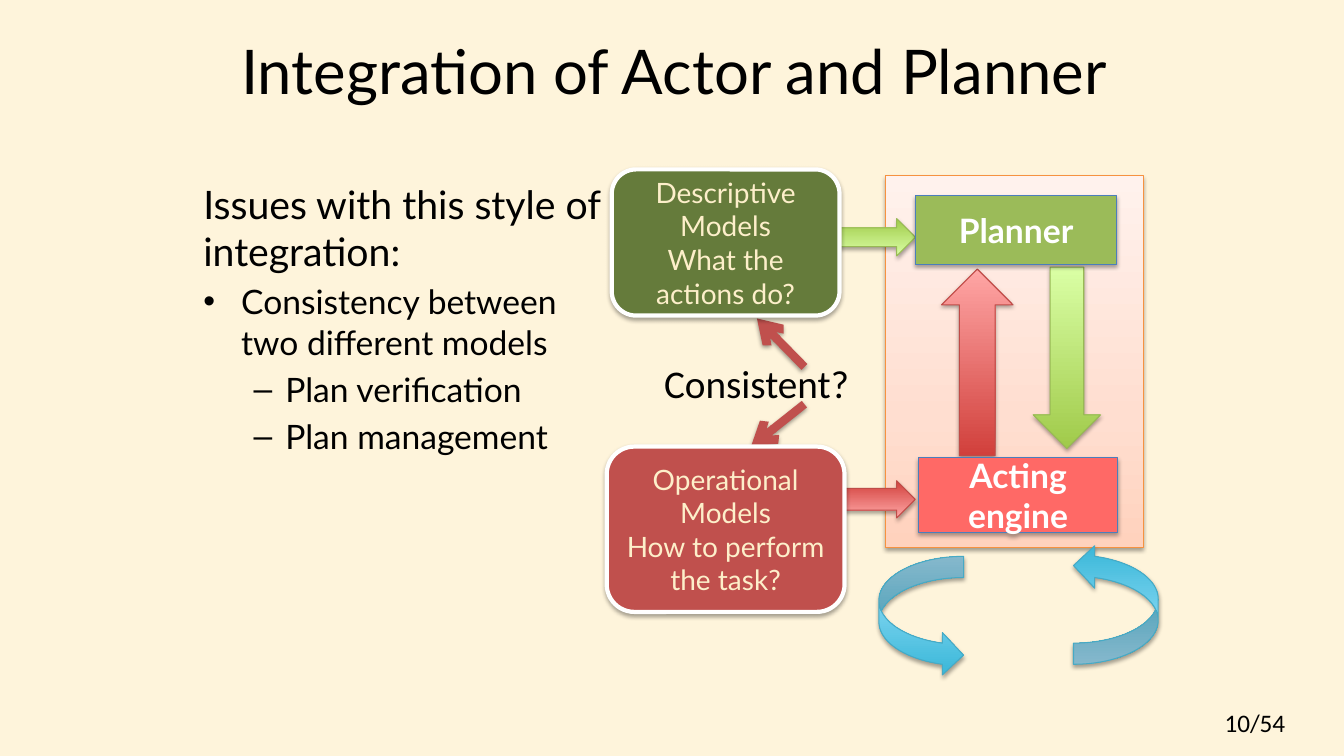
from pptx import Presentation
from pptx.dml.color import RGBColor
from pptx.enum.shapes import MSO_CONNECTOR, MSO_SHAPE
from pptx.enum.text import MSO_ANCHOR, PP_ALIGN
from pptx.oxml import parse_xml
from pptx.oxml.ns import nsdecls, qn
from pptx.util import Pt

RECT, ROUND = MSO_SHAPE.RECTANGLE, MSO_SHAPE.ROUNDED_RECTANGLE
UP, DOWN, RIGHT = MSO_SHAPE.UP_ARROW, MSO_SHAPE.DOWN_ARROW, MSO_SHAPE.RIGHT_ARROW
CURVED = MSO_SHAPE.CURVED_RIGHT_ARROW
STRAIGHT = MSO_CONNECTOR.STRAIGHT
TOP, MIDDLE = MSO_ANCHOR.TOP, MSO_ANCHOR.MIDDLE
LEFT, CENTER = PP_ALIGN.LEFT, PP_ALIGN.CENTER

BACKGROUND = RGBColor(0xFE, 0xF4, 0xDB)
BLACK = RGBColor(0, 0, 0)
WHITE = RGBColor(0xFF, 0xFF, 0xFF)
CREAM = RGBColor(0xFD, 0xEF, 0xCA)
RED = RGBColor(0xC0, 0x50, 0x4D)
OLIVE = RGBColor(0x65, 0x7B, 0x3B)
GREEN = RGBColor(0x9B, 0xBB, 0x59)
CORAL = RGBColor(0xFF, 0x69, 0x66)
BLUE_EDGE = RGBColor(0x4B, 0x7E, 0xBC)
RED_EDGE = RGBColor(0xBF, 0x4C, 0x48)
GREEN_EDGE = RGBColor(0x98, 0xB9, 0x55)
CYAN_EDGE = RGBColor(0x46, 0xAA, 0xC5)
ORANGE_EDGE = RGBColor(0xF6, 0x92, 0x40)

# Gradients as (percent, colour) stops
RED_FADE = [(0, RGBColor(0xD1, 0x40, 0x3C)), (100, RGBColor(0xFF, 0xA6, 0xA5))]
GREEN_FADE = [(0, RGBColor(0xA0, 0xCA, 0x4A)), (100, RGBColor(0xDA, 0xFF, 0xA5))]
CYAN_FADE = [(0, RGBColor(0x39, 0xB7, 0xD8)), (100, RGBColor(0xA7, 0xE6, 0xFF))]
PEACH_FADE = [(0, RGBColor(0xFF, 0xD2, 0xBD)), (35, RGBColor(0xFF, 0xDE, 0xD0)),
              (100, RGBColor(0xFF, 0xF2, 0xED))]


def add_shadow(s, alpha=35, dist=1.8):
    spPr = s._element.spPr
    for old in spPr.findall(qn("a:effectLst")):
        spPr.remove(old)
    spPr.append(parse_xml(
        f'<a:effectLst {nsdecls("a")}><a:outerShdw blurRad="{Pt(3.1)}" '
        f'dist="{Pt(dist)}" dir="5400000" rotWithShape="0"><a:srgbClr val="000000">'
        f'<a:alpha val="{alpha * 1000}"/></a:srgbClr></a:outerShdw></a:effectLst>'))


def set_gradient(s, stops, angle):
    gs = "".join(f'<a:gs pos="{pos * 1000}"><a:srgbClr val="{color}"/></a:gs>'
                 for pos, color in stops)
    s._element.spPr.find(qn("a:prstGeom")).addnext(parse_xml(
        f'<a:gradFill {nsdecls("a")} rotWithShape="1"><a:gsLst>{gs}</a:gsLst>'
        f'<a:lin ang="{angle * 60000}" scaled="0"/></a:gradFill>'))


def add_run(p, text, size, color=BLACK, font="Lato", bold=False):
    r = p.add_run()
    r.text = text
    r.font.size, r.font.name, r.font.bold = Pt(size), font, bold
    r.font.color.rgb = color


def add_text(slide, box, text, size, font="Lato", align=LEFT, anchor=TOP):
    tf = slide.shapes.add_textbox(*map(Pt, box)).text_frame
    tf.word_wrap = True
    tf.vertical_anchor = anchor
    p = tf.paragraphs[0]
    p.alignment = align
    add_run(p, text, size, font=font)
    return tf


def add_bullet(tf, lines, char, margin, hang, level=0):
    p = tf.add_paragraph()
    p.level = level
    pPr = p._p.get_or_add_pPr()
    pPr.set("marL", str(Pt(margin)))
    pPr.set("indent", str(-Pt(hang)))
    p.space_before = Pt(4.8)
    pPr.append(parse_xml(f'<a:buFont {nsdecls("a")} typeface="Arial"/>'))
    pPr.append(parse_xml(f'<a:buChar {nsdecls("a")} char="{char}"/>'))
    for i, line in enumerate(lines):
        if i:
            p.add_line_break()
        add_run(p, line, 24)


def add_block(slide, kind, box, edge, width=0.75):
    s = slide.shapes.add_shape(kind, *map(Pt, box))
    s.line.color.rgb = edge
    s.line.width = Pt(width)
    return s


def add_fade(slide, kind, box, stops, edge, angle=270, rotation=0):
    s = add_block(slide, kind, box, edge)
    s.rotation = rotation
    set_gradient(s, stops, angle)
    add_shadow(s)
    return s


def add_label_box(slide, kind, box, fill, edge, width, lines, size, color, bold=False):
    s = add_block(slide, kind, box, edge, width)
    s.fill.solid()
    s.fill.fore_color.rgb = fill
    add_shadow(s)
    tf = s.text_frame
    tf.word_wrap = True
    tf.vertical_anchor = MIDDLE
    for i, line in enumerate(lines):
        p = tf.add_paragraph() if i else tf.paragraphs[0]
        p.alignment = CENTER
        add_run(p, line, size, color, bold=bold)


def add_check_arrow(slide, x1, y1, x2, y2):
    c = slide.shapes.add_connector(STRAIGHT, Pt(x1), Pt(y1), Pt(x2), Pt(y2))
    c.line.color.rgb = RED
    c.line.width = Pt(6)
    c.line._get_or_add_ln().append(
        parse_xml(f'<a:tailEnd {nsdecls("a")} type="arrow"/>'))
    add_shadow(c, 38, 1.6)


def main():
    prs = Presentation()
    prs.slide_width, prs.slide_height = Pt(960), Pt(540)
    slide = prs.slides.add_slide(prs.slide_layouts[6])
    slide.background.fill.solid()
    slide.background.fill.fore_color.rgb = BACKGROUND

    # Page number, title and issues
    add_text(slide, (867.6, 501.8, 88.6, 28.8), "10/54", 18, "Calibri")
    add_text(slide, (157.7, 5, 648, 90), "Integration of Actor and Planner", 44,
             align=CENTER, anchor=MIDDLE)
    tf = add_text(slide, (138.2, 125.3, 309.6, 378.7),
                  "Issues with this style of integration:", 28)
    add_bullet(tf, ["Consistency between", "two different models"], "•", 27, 27)
    for item in ("Plan verification", "Plan management"):
        add_bullet(tf, [item], "–", 58.5, 22.5, level=1)

    # Consistency check between the models
    add_text(slide, (467.3, 253.4, 172.8, 41), "Consistent?", 28, "Calibri")
    add_check_arrow(slide, 574.6, 262.1, 540.7, 227.5)
    add_check_arrow(slide, 574.6, 288.7, 536.4, 319)

    # Actor panel with its loop arrows
    add_fade(slide, RECT, (632.2, 125.3, 184.3, 265.7), PEACH_FADE, ORANGE_EDGE)
    add_fade(slide, CURVED, (627.8, 397.4, 60.5, 85.7), CYAN_FADE, CYAN_EDGE)
    add_fade(slide, CURVED, (766.8, 388.8, 60.5, 85.7), CYAN_FADE, CYAN_EDGE,
             rotation=180)
    add_fade(slide, UP, (672.5, 192.2, 51.1, 133.2), RED_FADE, RED_EDGE)
    add_fade(slide, DOWN, (738, 190.8, 48.2, 129.6), GREEN_FADE, GREEN_EDGE)

    # Models feeding the planner and the engine
    s = add_fade(slide, RIGHT, (574.6, 343.4, 79.2, 26.6), RED_FADE, RED_EDGE, 90)
    s.adjustments[0] = 0.58
    add_label_box(slide, ROUND, (433.4, 319, 169.9, 118.1), RED, WHITE, 3,
                  ["Operational Models", "How to perform the task?"], 20, CREAM)
    add_fade(slide, RIGHT, (574.6, 156.2, 79.2, 26.6), GREEN_FADE, GREEN_EDGE, 90)
    add_label_box(slide, ROUND, (437, 121, 162.7, 104.4), OLIVE, WHITE, 3,
                  ["Descriptive Models", "What the actions do?"], 20, CREAM)

    # Planner and acting engine
    add_label_box(slide, RECT, (653.8, 139.7, 144, 49), GREEN, BLUE_EDGE, 0.75,
                  ["Planner"], 24, WHITE, True)
    add_label_box(slide, RECT, (655.9, 326.9, 142.6, 53.3), CORAL, BLUE_EDGE, 0.75,
                  ["Acting engine"], 24, WHITE, True)

    prs.save("out.pptx")


if __name__ == "__main__":
    main()
